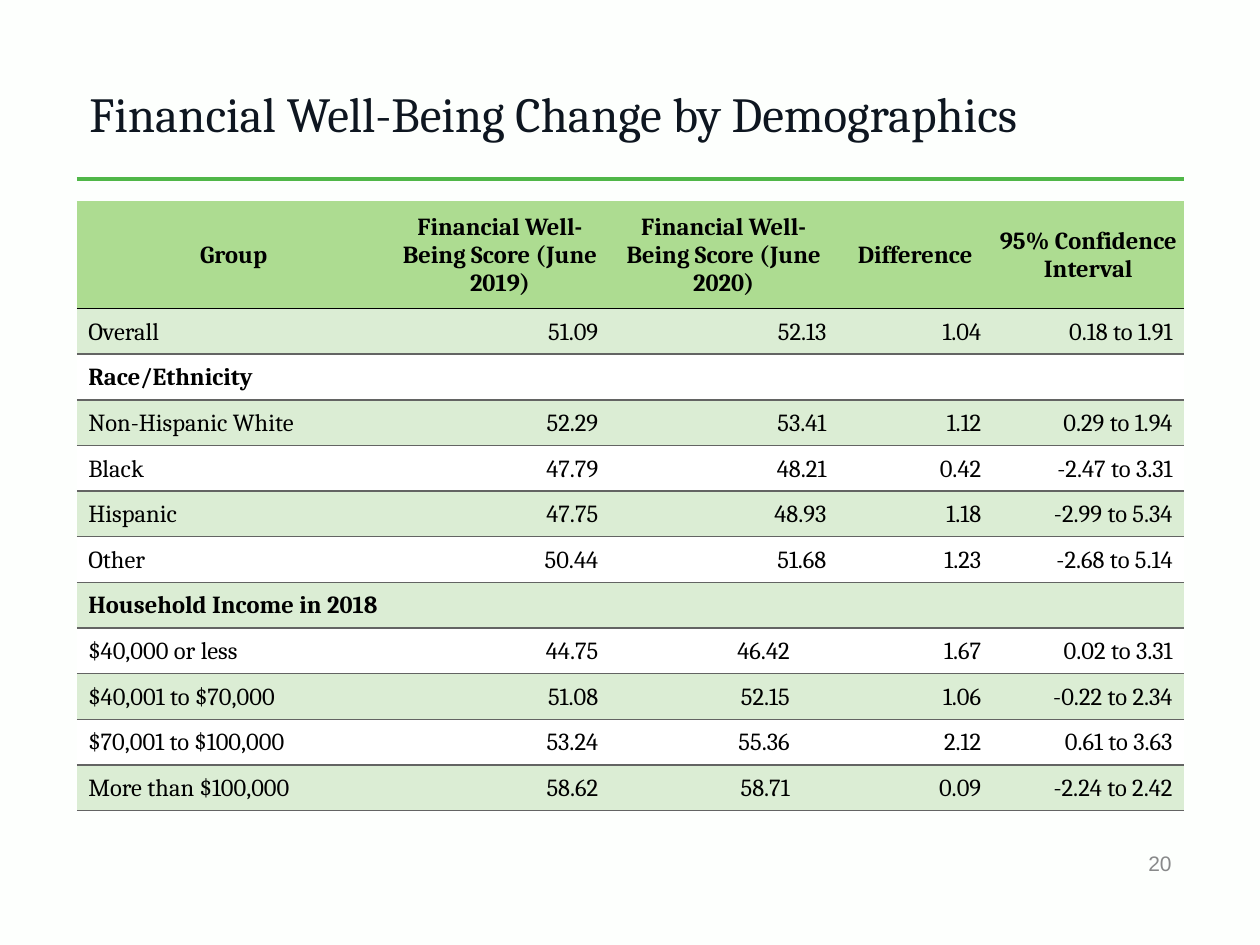
import itertools

import lxml.etree
import pptx
import pptx.dml.color
import pptx.enum.shapes
import pptx.enum.text
import pptx.oxml.ns
import pptx.util

Cm = pptx.util.Cm
Pt = pptx.util.Pt
RGBColor = pptx.dml.color.RGBColor
ALIGN = pptx.enum.text.PP_ALIGN
MIDDLE = pptx.enum.text.MSO_ANCHOR.MIDDLE
qn = pptx.oxml.ns.qn

PAPER = RGBColor(0xFD, 0xFF, 0xFD)
INK = RGBColor(0x0E, 0x16, 0x20)
BLACK = RGBColor(0x00, 0x00, 0x00)
WHITE = RGBColor(0xFF, 0xFF, 0xFF)
RULE_GREEN = RGBColor(0x50, 0xB7, 0x48)
HEADER_GREEN = RGBColor(0xAD, 0xDC, 0x91)
BAND_GREEN = RGBColor(0xDB, 0xED, 0xD4)
BORDER_GRAY = RGBColor(0x63, 0x64, 0x63)
NUMBER_GRAY = RGBColor(0x88, 0x89, 0x8A)

LEFT = Cm(1.55)
WIDTH = Cm(22.32)
COLUMN_WIDTHS = (6.32, 0.56, 3.86, 3.86, 0.74, 3.12, 3.86)
HEADER_HEIGHT = 2.16
ROW_HEIGHT = 0.92
PLAIN_TABLE_STYLE = "{2D5ABB26-0587-4C30-8999-92F81FD0307C}"

RACE_STARTS = (0, 1, 3, 5, 6)
INCOME_STARTS = (0, 2, 3, 4, 6)
FULL_WIDTH = (0,)

HEADINGS = (
    "Group",
    "Financial Well-Being Score (June 2019)",
    "Financial Well-Being Score (June 2020)",
    "Difference",
    "95% Confidence Interval",
)
GROUPS = (
    (RACE_STARTS, ("Overall", "51.09", "52.13", "1.04", "0.18 to 1.91")),
    (RACE_STARTS, ("Race/Ethnicity", "", "", "", "")),
    (RACE_STARTS, ("Non-Hispanic White", "52.29", "53.41", "1.12", "0.29 to 1.94")),
    (RACE_STARTS, ("Black", "47.79", "48.21", "0.42", "-2.47 to 3.31")),
    (RACE_STARTS, ("Hispanic", "47.75", "48.93", "1.18", "-2.99 to 5.34")),
    (RACE_STARTS, ("Other", "50.44", "51.68", "1.23", "-2.68 to 5.14")),
    (FULL_WIDTH, ("Household Income in 2018",)),
    (INCOME_STARTS, ("$40,000 or less", "44.75", "46.42", "1.67", "0.02 to 3.31")),
    (INCOME_STARTS, ("$40,001 to $70,000", "51.08", "52.15", "1.06", "-0.22 to 2.34")),
    (INCOME_STARTS, ("$70,001 to $100,000", "53.24", "55.36", "2.12", "0.61 to 3.63")),
    (INCOME_STARTS, ("More than $100,000", "58.62", "58.71", "0.09", "-2.24 to 2.42")),
)
SECTIONS = ("Race/Ethnicity", "Household Income in 2018")


def add_text(frame, text, size, color, align, font="Cambria", bold=False):
    paragraph = frame.paragraphs[0]
    paragraph.alignment = align
    run = paragraph.add_run()
    run.text = text
    run.font.name = font
    run.font.size = Pt(size)
    run.font.bold = bold
    run.font.color.rgb = color


def add_title(slide, text):
    title = slide.shapes.title
    title.left, title.top, title.width, title.height = LEFT, Cm(1.24), WIDTH, Cm(2.06)
    title.text_frame.vertical_anchor = MIDDLE
    add_text(title.text_frame, text, 28, INK, ALIGN.LEFT)


def add_rule(slide):
    y = Cm(3.61)
    rule = slide.shapes.add_connector(
        pptx.enum.shapes.MSO_CONNECTOR.STRAIGHT, LEFT, y, LEFT + WIDTH, y
    )
    rule.line.color.rgb = RULE_GREEN
    rule.line.width = Pt(2)
    lxml.etree.SubElement(rule._element.spPr, qn("a:effectLst"))


def add_page_number(slide, number):
    box = slide.shapes.add_textbox(Cm(15.82), Cm(16.89), Cm(8.05), Cm(1.02))
    box.text_frame.word_wrap = True
    box.text_frame.vertical_anchor = MIDDLE
    add_text(box.text_frame, number, 12, NUMBER_GRAY, ALIGN.RIGHT, font="Arial")


def set_border(cell, side, color):
    border = lxml.etree.Element(qn(f"a:{side}"), w=str(Pt(1)))
    fill = lxml.etree.SubElement(border, qn("a:solidFill"))
    lxml.etree.SubElement(fill, qn("a:srgbClr"), val=str(color))
    cell._tc.get_or_add_tcPr().insert(0, border)


def fill_row(table, row, starts, texts, fill, top, bottom):
    for column in range(len(COLUMN_WIDTHS)):
        cell = table.cell(row, column)
        cell.fill.solid()
        cell.fill.fore_color.rgb = fill
        set_border(cell, "lnB", bottom)
        set_border(cell, "lnT", top)

    edges = itertools.pairwise((*starts, len(COLUMN_WIDTHS)))
    for (start, end), text in zip(edges, texts):
        cell = table.cell(row, start)
        if end - start > 1:
            cell.merge(table.cell(row, end - 1))
        is_header = row == 0
        is_label = start == 0
        cell.vertical_anchor = MIDDLE
        cell.margin_left = Cm(0.23 if is_label and not is_header else 0.03)
        cell.margin_right = Cm(0.03 if is_label or is_header else 0.23)
        cell.margin_top = Cm(0.03)
        cell.margin_bottom = 0
        if text:
            align = ALIGN.CENTER if is_header else ALIGN.LEFT if is_label else ALIGN.RIGHT
            bold = is_header or text in SECTIONS
            add_text(cell.text_frame, text, 14, BLACK, align, bold=bold)


def add_score_table(slide):
    frame = slide.shapes.add_table(
        len(GROUPS) + 1, len(COLUMN_WIDTHS), LEFT, Cm(4.06), WIDTH,
        Cm(HEADER_HEIGHT + ROW_HEIGHT * len(GROUPS)),
    )
    table = frame.table
    table._tbl.tblPr.find(qn("a:tableStyleId")).text = PLAIN_TABLE_STYLE
    for column, width in zip(table.columns, COLUMN_WIDTHS):
        column.width = Cm(width)
    for index, table_row in enumerate(table.rows):
        table_row.height = Cm(ROW_HEIGHT if index else HEADER_HEIGHT)

    fill_row(table, 0, RACE_STARTS, HEADINGS, HEADER_GREEN, HEADER_GREEN, BLACK)
    for row, (starts, texts) in enumerate(GROUPS, 1):
        fill = BAND_GREEN if row % 2 else WHITE
        top = BLACK if row == 1 else BORDER_GRAY
        fill_row(table, row, starts, texts, fill, top, BORDER_GRAY)


def main():
    deck = pptx.Presentation()
    deck.slide_width = Cm(25.4)
    deck.slide_height = Cm(19.05)
    slide = deck.slides.add_slide(deck.slide_layouts[5])
    slide.background.fill.solid()
    slide.background.fill.fore_color.rgb = PAPER
    add_rule(slide)
    add_title(slide, "Financial Well-Being Change by Demographics")
    add_page_number(slide, "20")
    add_score_table(slide)
    deck.save("out.pptx")


if __name__ == "__main__":
    main()
